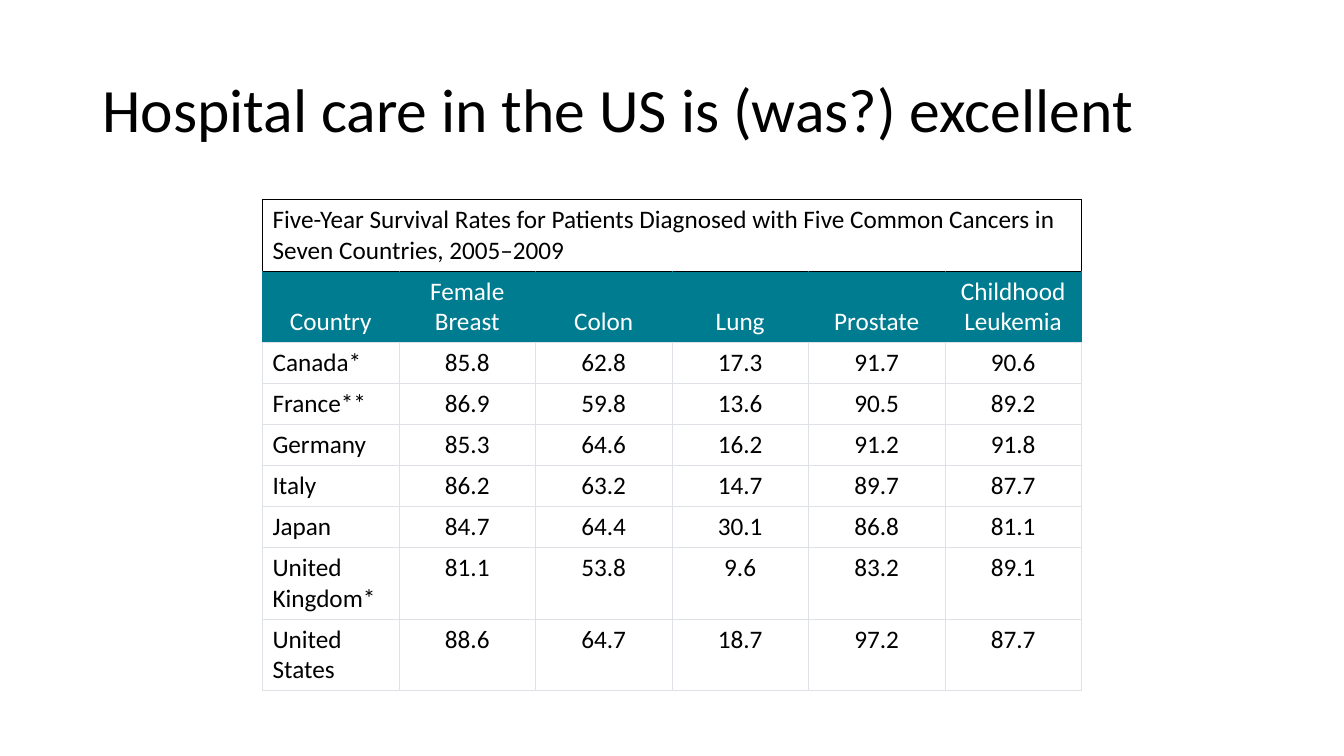
from dataclasses import dataclass

from lxml import etree
from pptx import Presentation
from pptx import util as u
from pptx.dml import color
from pptx.enum import text
from pptx.oxml import ns

PX = 9525  # EMU in one px, 96 px to the inch


@dataclass(frozen=True)
class Theme:
    font: str = "Calibri"
    title_size: int = 44
    table_size: int = 18
    ink: str = "000000"
    paper: str = "FFFFFF"
    teal: str = "007C91"
    grid: str = "DEE2E6"
    grid_width: float = 0.6
    caption_width: float = 1


TITLE = "Hospital care in the US is (was?) excellent"
CAPTION = ("Five-Year Survival Rates for Patients Diagnosed with "
           "Five Common Cancers in Seven Countries, 2005–2009")
HEADINGS = ["Country", "Female Breast", "Colon", "Lung", "Prostate",
            "Childhood Leukemia"]
SURVIVAL_RATES = [
    ("Canada*", 85.8, 62.8, 17.3, 91.7, 90.6),
    ("France**", 86.9, 59.8, 13.6, 90.5, 89.2),
    ("Germany", 85.3, 64.6, 16.2, 91.2, 91.8),
    ("Italy", 86.2, 63.2, 14.7, 89.7, 87.7),
    ("Japan", 84.7, 64.4, 30.1, 86.8, 81.1),
    ("United Kingdom*", 81.1, 53.8, 9.6, 83.2, 89.1),
    ("United States", 88.6, 64.7, 18.7, 97.2, 87.7),
]
COLUMN_WIDTH = 130
SHORT_ROW, TALL_ROW = 39, 66
ROW_HEIGHTS = [TALL_ROW] * 2 + [SHORT_ROW] * 5 + [TALL_ROW] * 2


def write(frame, words, *, font, size, ink, align=text.PP_ALIGN.LEFT,
          spacing=1.0):
    paragraph = frame.paragraphs[0]
    paragraph.alignment = align
    paragraph.line_spacing = spacing
    run = paragraph.add_run()
    run.text = words
    run.font.name = font
    run.font.size = u.Pt(size)
    run.font.bold = False
    run.font.color.rgb = color.RGBColor.from_string(ink)


def set_borders(cell, sides, ink, width):
    """Draw the sides of a cell, named by letters out of LRTB in that order."""
    properties = cell._tc.get_or_add_tcPr()
    for side in sides:
        line = etree.SubElement(properties, ns.qn("a:ln" + side),
                                w=str(u.Pt(width)))
        fill = etree.SubElement(line, ns.qn("a:solidFill"))
        etree.SubElement(fill, ns.qn("a:srgbClr"), val=ink)


class SlideBuilder:
    def __init__(self, presentation, theme):
        self.theme = theme
        self.slide = presentation.slides.add_slide(
            presentation.slide_layouts.get_by_name("Title Only"))

    def title(self, words, left, top, width, height):
        shape = self.slide.shapes.title
        shape.left, shape.top = left * PX, top * PX
        shape.width, shape.height = width * PX, height * PX
        frame = shape.text_frame
        frame.word_wrap = True
        frame.vertical_anchor = text.MSO_ANCHOR.MIDDLE
        write(frame, words, font=self.theme.font, size=self.theme.title_size,
              ink=self.theme.ink, spacing=0.9)

    def cell(self, cell, words, *, fill, ink, anchor=text.MSO_ANCHOR.TOP,
             align=text.PP_ALIGN.LEFT):
        cell.fill.solid()
        cell.fill.fore_color.rgb = color.RGBColor.from_string(fill)
        cell.vertical_anchor = anchor
        write(cell.text_frame, words, font=self.theme.font,
              size=self.theme.table_size, ink=ink, align=align)

    def table(self, caption, headings, records, left, top):
        theme = self.theme
        count = len(headings)
        table = self.slide.shapes.add_table(
            len(ROW_HEIGHTS), count, left * PX, top * PX,
            count * COLUMN_WIDTH * PX, sum(ROW_HEIGHTS) * PX).table
        table.first_row = table.horz_banding = False
        for column in table.columns:
            column.width = COLUMN_WIDTH * PX
        for row, height in zip(table.rows, ROW_HEIGHTS):
            row.height = height * PX

        for index in range(count):
            set_borders(table.cell(0, index), "LRTB", theme.ink,
                        theme.caption_width)
        table.cell(0, 0).merge(table.cell(0, count - 1))
        self.cell(table.cell(0, 0), caption, fill=theme.paper, ink=theme.ink,
                  anchor=text.MSO_ANCHOR.MIDDLE)

        for index, heading in enumerate(headings):
            cell = table.cell(1, index)
            set_borders(cell, "LR", theme.teal, theme.grid_width)
            set_borders(cell, "T", theme.ink, theme.caption_width)
            set_borders(cell, "B", theme.grid, theme.grid_width)
            self.cell(cell, heading, fill=theme.teal, ink=theme.paper,
                      anchor=text.MSO_ANCHOR.BOTTOM,
                      align=text.PP_ALIGN.CENTER)

        for row_index, record in enumerate(records, start=2):
            for index, value in enumerate(record):
                cell = table.cell(row_index, index)
                set_borders(cell, "LRTB", theme.grid, theme.grid_width)
                align = text.PP_ALIGN.CENTER if index else text.PP_ALIGN.LEFT
                self.cell(cell, str(value), fill=theme.paper, ink=theme.ink,
                          align=align)


def main():
    presentation = Presentation()
    presentation.slide_width = 1280 * PX
    presentation.slide_height = 720 * PX
    builder = SlideBuilder(presentation, Theme())
    builder.title(TITLE, 88, 38, 1104, 139)
    builder.table(CAPTION, HEADINGS, SURVIVAL_RATES, 250, 190)
    presentation.save("out.pptx")


if __name__ == "__main__":
    main()
